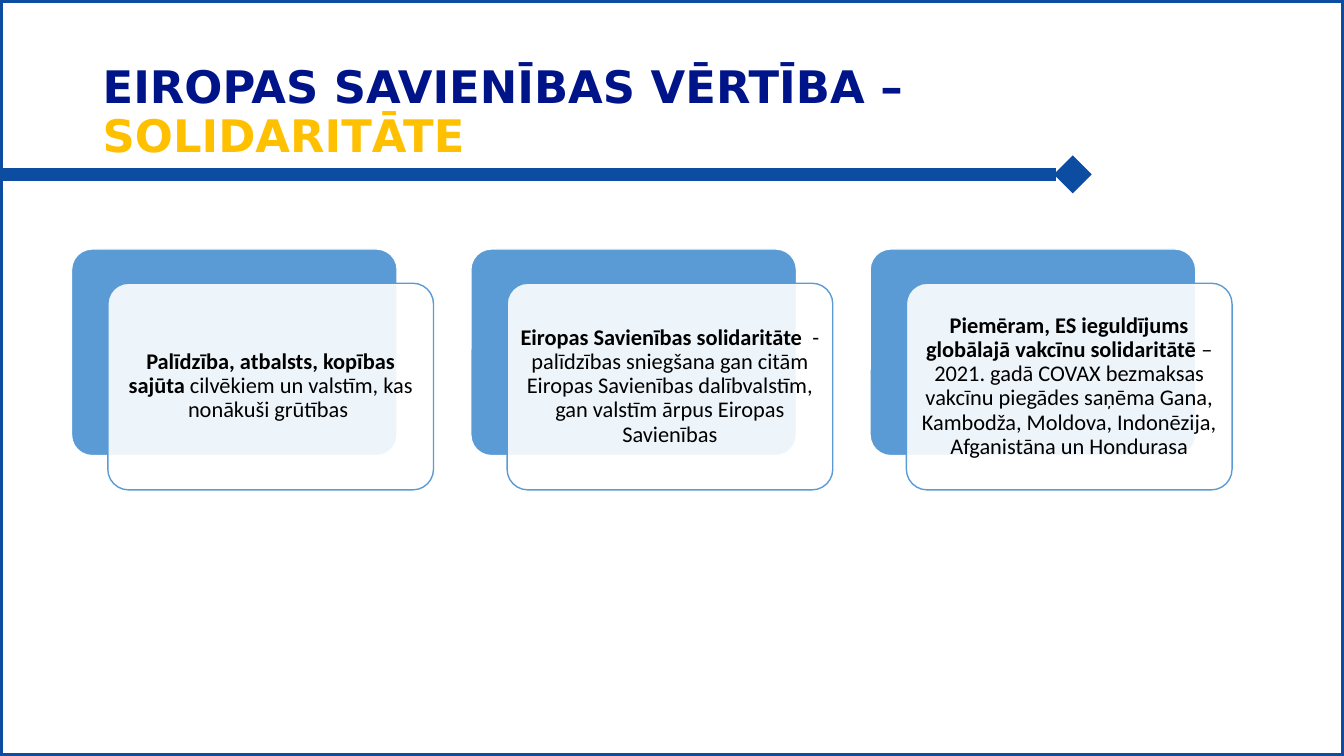
from lxml.etree import SubElement
from pptx import Presentation
from pptx.dml.color import RGBColor
from pptx.enum.shapes import MSO_CONNECTOR, MSO_SHAPE
from pptx.enum.text import MSO_ANCHOR, PP_ALIGN
from pptx.oxml.ns import qn
from pptx.util import Inches, Pt

# Content
TITLE = ("EIROPAS SAVIENĪBAS VĒRTĪBA –", "SOLIDARITĀTE")
CARDS = [
    ("Palīdzība, atbalsts, kopības sajūta ",
     "cilvēkiem un valstīm, kas nonākuši grūtības "),
    ("Eiropas Savienības solidaritāte ",
     " - palīdzības sniegšana gan citām Eiropas Savienības dalībvalstīm, "
     "gan valstīm ārpus Eiropas Savienības"),
    ("Piemēram, ES ieguldījums globālajā vakcīnu solidaritātē ",
     "– 2021. gadā COVAX bezmaksas vakcīnu piegādes saņēma Gana, Kambodža, "
     "Moldova, Indonēzija, Afganistāna un Hondurasa"),
]

# Colours and fonts
FRAME_BLUE = RGBColor(0x0C, 0x4D, 0xA2)
TITLE_BLUE = RGBColor(0x00, 0x14, 0x89)
GOLD = RGBColor(0xFF, 0xC0, 0x00)
CARD_BLUE = RGBColor(0x5B, 0x9B, 0xD5)
WHITE = RGBColor(0xFF, 0xFF, 0xFF)
BLACK = RGBColor(0x00, 0x00, 0x00)
TITLE_FONT = "DejaVu Sans"
CARD_FONT = "Calibri"

# Card grid, in inches
CARD_LEFT, CARD_TOP = 0.71, 2.47
CARD_WIDTH, CARD_HEIGHT = 3.23, 2.05
CARD_PITCH = 3.96
FRONT_SHIFT_X, FRONT_SHIFT_Y = 0.36, 0.34
CARD_INSET = 0.07

presentation = Presentation()
presentation.slide_width = Inches(13.33)
presentation.slide_height = Inches(7.5)
slide = presentation.slides.add_slide(presentation.slide_layouts[6])


def add_run(paragraph, text, font_name, size, color, bold):
    run = paragraph.add_run()
    run.text = text
    run.font.name = font_name
    run.font.size = Pt(size)
    run.font.color.rgb = color
    run.font.bold = bold


def add_panel(left, top, fill, line):
    panel = slide.shapes.add_shape(
        MSO_SHAPE.ROUNDED_RECTANGLE, Inches(left), Inches(top),
        Inches(CARD_WIDTH), Inches(CARD_HEIGHT))
    panel.shadow.inherit = False
    panel.adjustments[0] = 0.1
    panel.fill.solid()
    panel.fill.fore_color.rgb = fill
    panel.line.color.rgb = line
    panel.line.width = Pt(1)
    return panel


# Slide frame
frame = slide.shapes.add_shape(
    MSO_SHAPE.RECTANGLE, 0, 0, presentation.slide_width, presentation.slide_height)
frame.shadow.inherit = False
frame.fill.background()
frame.line.color.rgb = FRAME_BLUE
frame.line.width = Pt(4.5)

# Title
title = slide.shapes.add_textbox(Inches(0.92), Inches(0.4), Inches(11.5), Inches(1.45))
title.text_frame.word_wrap = True
title.text_frame.vertical_anchor = MSO_ANCHOR.MIDDLE
paragraph = title.text_frame.paragraphs[0]
paragraph.line_spacing = 0.9
add_run(paragraph, TITLE[0], TITLE_FONT, 32, TITLE_BLUE, True)
paragraph.add_line_break()
add_run(paragraph, TITLE[1], TITLE_FONT, 32, GOLD, True)

# Cards: a blue panel behind a translucent white one with the text
for column, (lead, body) in enumerate(CARDS):
    left = CARD_LEFT + column * CARD_PITCH
    add_panel(left, CARD_TOP, CARD_BLUE, WHITE)
    front = add_panel(left + FRONT_SHIFT_X, CARD_TOP + FRONT_SHIFT_Y, WHITE, CARD_BLUE)
    fill_color = front.fill._xPr.find(qn("a:solidFill"))[0]
    SubElement(fill_color, qn("a:alpha"), val="90000")

    text_frame = front.text_frame
    text_frame.word_wrap = True
    text_frame.vertical_anchor = MSO_ANCHOR.MIDDLE
    text_frame.margin_left = text_frame.margin_right = Inches(CARD_INSET)
    text_frame.margin_top = text_frame.margin_bottom = Inches(CARD_INSET)
    paragraph = text_frame.paragraphs[0]
    paragraph.alignment = PP_ALIGN.CENTER
    paragraph.line_spacing = 0.9
    add_run(paragraph, lead, CARD_FONT, 16, BLACK, True)
    add_run(paragraph, body, CARD_FONT, 16, BLACK, False)

# Rule under the title, ending in a diamond
rule = slide.shapes.add_connector(
    MSO_CONNECTOR.STRAIGHT, Inches(-0.02), Inches(1.73), Inches(10.64), Inches(1.73))
rule.line.color.rgb = FRAME_BLUE
rule.line.width = Pt(9)
SubElement(rule.line._get_or_add_ln(), qn("a:tailEnd"), type="diamond")
SubElement(rule._element.spPr, qn("a:effectLst"))

presentation.save("out.pptx")
